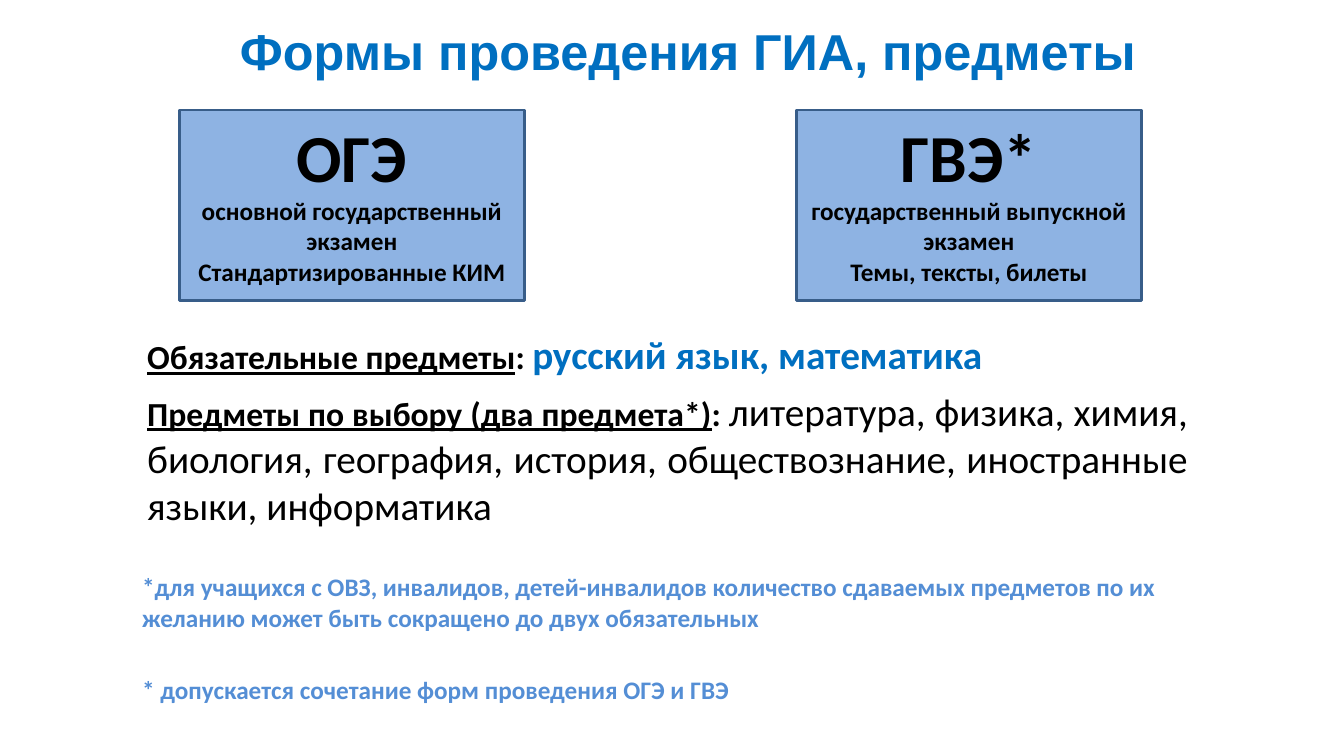
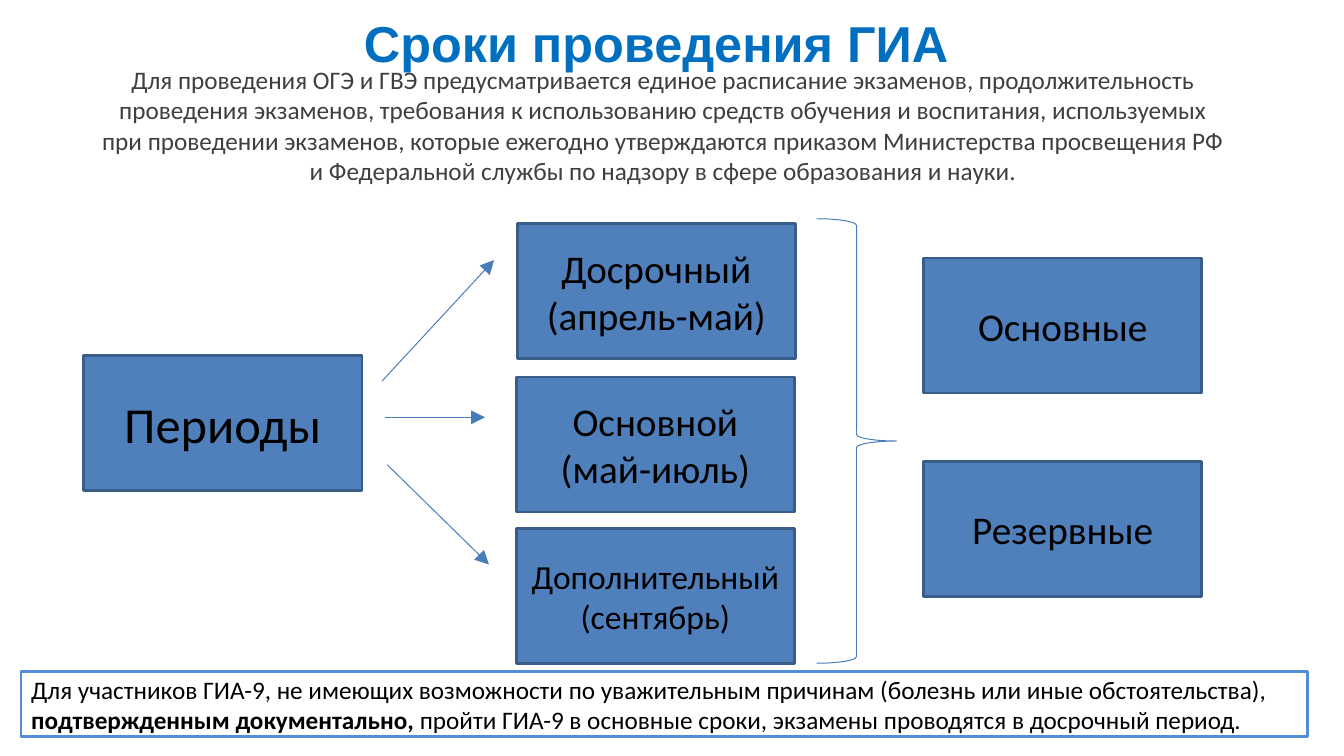
"""Build two slides on the forms and the schedule of the state exams."""
from dataclasses import dataclass

from pptx import Presentation
from pptx.dml.color import RGBColor
from pptx.enum.shapes import MSO_CONNECTOR, MSO_SHAPE
from pptx.enum.text import MSO_ANCHOR, PP_ALIGN
from pptx.oxml.ns import qn
from pptx.shapes.autoshape import Shape
from pptx.slide import Slide
from pptx.util import Inches, Pt
from lxml.etree import SubElement

COLORS = {
    "title": "006FC0",
    "text": "000000",
    "intro": "3F3F3F",
    "note": "548ED5",
    "exam": "8EB3E3",
    "period": "4F80BC",
    "border": "385D89",
    "arrow": "497DBA",
    "frame": "548DD5",
}
EXAM_SIZE = (3.42, 1.89)
PERIOD_SIZE = (2.76, 1.34)


@dataclass(frozen=True)
class Span:
    text: str
    size: float = 18
    color: str = "text"
    bold: bool = False
    underline: bool = False
    font: str = "Calibri"


@dataclass(frozen=True)
class Line:
    spans: tuple[Span, ...]
    align: PP_ALIGN = PP_ALIGN.LEFT
    before: float = 0
    indent: float = 0


@dataclass(frozen=True)
class Box:
    left: float
    top: float
    width: float
    height: float


@dataclass(frozen=True)
class Exam:
    left: float
    name: str
    details: tuple[str, ...]


@dataclass(frozen=True)
class Period:
    left: float
    top: float
    size: float
    lines: tuple[str, ...]


@dataclass(frozen=True)
class Arrow:
    start: tuple[float, float]
    end: tuple[float, float]


EXAMS = (
    Exam(1.78, "ОГЭ", ("основной государственный", "экзамен", "Стандартизированные КИМ")),
    Exam(7.9, "ГВЭ*", ("государственный выпускной", "экзамен", "Темы, тексты, билеты")),
)
SUBJECTS = (
    Line((
        Span("Обязательные предметы", 24, bold=True, underline=True),
        Span(": ", 24, bold=True),
        Span("русский язык, математика", 28, "title", bold=True),
    ), PP_ALIGN.JUSTIFY, indent=0.06),
    Line((
        Span("Предметы по выбору (два предмета*)", 24, bold=True, underline=True),
        Span(": ", 24, bold=True),
        Span("литература, физика, химия, биология, география, история, "
             "обществознание, иностранные языки, информатика", 28),
    ), PP_ALIGN.JUSTIFY, 6.8, 0.06),
    Line((Span("*для учащихся с ОВЗ, инвалидов, детей-инвалидов количество сдаваемых "
               "предметов по их желанию может быть сокращено до двух обязательных",
               color="note", bold=True),), before=30.9, indent=0.01),
    Line((Span("* допускается сочетание форм проведения ОГЭ и ГВЭ",
               color="note", bold=True),), before=30, indent=0.01),
)
INTRO = (
    "Для проведения ОГЭ и ГВЭ предусматривается единое расписание экзаменов, "
    "продолжительность проведения экзаменов, требования к использованию средств "
    "обучения и воспитания, используемых при проведении экзаменов, которые ежегодно "
    "утверждаются приказом Министерства просвещения РФ и Федеральной службы по надзору "
    "в сфере образования и науки."
)
PERIODS = (
    Period(0.83, 3.53, 36, ("Периоды",)),
    Period(5.13, 2.22, 28, ("Досрочный", "(апрель-май)")),
    Period(5.12, 3.74, 28, ("Основной", "(май-июль)")),
    Period(5.12, 5.24, 24, ("Дополнительный", "(сентябрь)")),
    Period(9.16, 2.56, 28, ("Основные",)),
    Period(9.16, 4.58, 28, ("Резервные",)),
)
ARROWS = (
    Arrow((3.79, 3.78), (4.9, 2.58)),
    Arrow((3.82, 4.14), (4.81, 4.14)),
    Arrow((3.84, 4.61), (4.85, 5.6)),
)
FOOTER = (
    Line((Span("Для участников ГИА-9, не имеющих возможности по уважительным причинам "
               "(болезнь или иные обстоятельства),"),), indent=0.1),
    Line((
        Span("подтвержденным документально, ", bold=True),
        Span("пройти ГИА-9 в основные сроки, экзамены проводятся в досрочный период."),
    ), indent=0.1),
)


def rgb(name: str) -> RGBColor:
    """Return the named colour."""
    return RGBColor.from_string(COLORS[name])


def inches(box: Box) -> tuple[Inches, ...]:
    """Return the box as lengths."""
    return tuple(Inches(value) for value in (box.left, box.top, box.width, box.height))


def write(shape: Shape, lines: tuple[Line, ...], inset: float = 0,
          anchor: MSO_ANCHOR = MSO_ANCHOR.TOP) -> None:
    """Fill the shape with formatted lines."""
    frame = shape.text_frame
    frame_format = {
        "word_wrap": True, "vertical_anchor": anchor, "margin_top": Inches(inset),
        "margin_left": 0, "margin_right": 0, "margin_bottom": 0,
    }
    for name, value in frame_format.items():
        setattr(frame, name, value)
    for index, line in enumerate(lines):
        paragraph = frame.add_paragraph() if index else frame.paragraphs[0]
        paragraph.alignment = line.align
        paragraph.space_before = Pt(line.before)
        if line.indent:
            paragraph._p.get_or_add_pPr().set("marL", str(Inches(line.indent)))
        for span in line.spans:
            run = paragraph.add_run()
            run.text = span.text
            font_format = {
                "name": span.font, "size": Pt(span.size),
                "bold": span.bold, "underline": span.underline,
            }
            for name, value in font_format.items():
                setattr(run.font, name, value)
            run.font.color.rgb = rgb(span.color)


def add_text(slide: Slide, box: Box, lines: tuple[Line, ...], inset: float = 0) -> None:
    """Add a plain text box."""
    write(slide.shapes.add_textbox(*inches(box)), lines, inset)


def add_title(slide: Slide, box: Box, text: str) -> None:
    """Add the slide title."""
    add_text(slide, box, (Line((Span(text, 36, "title", bold=True, font="Arial"),)),))


def add_outlined(slide: Slide, kind: MSO_SHAPE, box: Box, line: str,
                 width: float = 1.92, fill: str | None = None) -> Shape:
    """Add an outlined shape, filled if a fill is named."""
    shape = slide.shapes.add_shape(kind, *inches(box))
    shape.shadow.inherit = False
    if fill:
        shape.fill.solid()
        shape.fill.fore_color.rgb = rgb(fill)
    else:
        shape.fill.background()
    shape.line.color.rgb = rgb(line)
    shape.line.width = Pt(width)
    return shape


def add_exam(slide: Slide, exam: Exam) -> None:
    """Add the box of one exam form."""
    box = Box(exam.left, 1.09, *EXAM_SIZE)
    shape = add_outlined(slide, MSO_SHAPE.RECTANGLE, box, "border", fill="exam")
    spans = (Span(exam.name, 48, bold=True), *(Span(text, bold=True) for text in exam.details))
    write(shape, tuple(Line((span,), PP_ALIGN.CENTER) for span in spans), 0.05)


def add_period(slide: Slide, period: Period) -> None:
    """Add one box of the schedule."""
    box = Box(period.left, period.top, *PERIOD_SIZE)
    shape = add_outlined(slide, MSO_SHAPE.RECTANGLE, box, "border", fill="period")
    lines = tuple(Line((Span(text, period.size),), PP_ALIGN.CENTER) for text in period.lines)
    write(shape, lines, anchor=MSO_ANCHOR.MIDDLE)


def add_arrow(slide: Slide, arrow: Arrow) -> None:
    """Add a thin arrow."""
    points = (Inches(value) for value in (*arrow.start, *arrow.end))
    connector = slide.shapes.add_connector(MSO_CONNECTOR.STRAIGHT, *points)
    connector.line.color.rgb = rgb("arrow")
    connector.line.width = Pt(0.72)
    SubElement(connector.line._get_or_add_ln(), qn("a:tailEnd"), type="triangle", w="lg", len="lg")
    SubElement(connector._element.spPr, qn("a:effectLst"))


def build_forms(slide: Slide) -> None:
    """Build the slide on exam forms and subjects."""
    add_title(slide, Box(2.38, 0.2, 10.03, 0.7), "Формы проведения ГИА, предметы")
    add_text(slide, Box(1.4, 3.17, 10.38, 3.83), SUBJECTS, 0.11)
    for exam in EXAMS:
        add_exam(slide, exam)


def build_schedule(slide: Slide) -> None:
    """Build the slide on the exam schedule."""
    add_title(slide, Box(3.61, 0.12, 6.2, 0.63), "Сроки проведения ГИА")
    intro = (Line((Span(INTRO, color="intro"),), PP_ALIGN.CENTER),)
    add_text(slide, Box(0.99, 0.63, 11.17, 1.23), intro, 0.01)
    for period in PERIODS:
        add_period(slide, period)
    for arrow in ARROWS:
        add_arrow(slide, arrow)
    add_outlined(slide, MSO_SHAPE.RIGHT_BRACE, Box(8.1, 2.17, 0.79, 4.41), "arrow", 0.72)
    footer = add_outlined(slide, MSO_SHAPE.RECTANGLE, Box(0.21, 6.66, 12.76, 0.65), "frame")
    write(footer, FOOTER, 0.03)


def main() -> None:
    """Build and save the presentation."""
    presentation = Presentation()
    presentation.slide_width = Inches(13.33)
    presentation.slide_height = Inches(7.5)
    for build in (build_forms, build_schedule):
        build(presentation.slides.add_slide(presentation.slide_layouts[6]))
    presentation.save("out.pptx")


if __name__ == "__main__":
    main()
